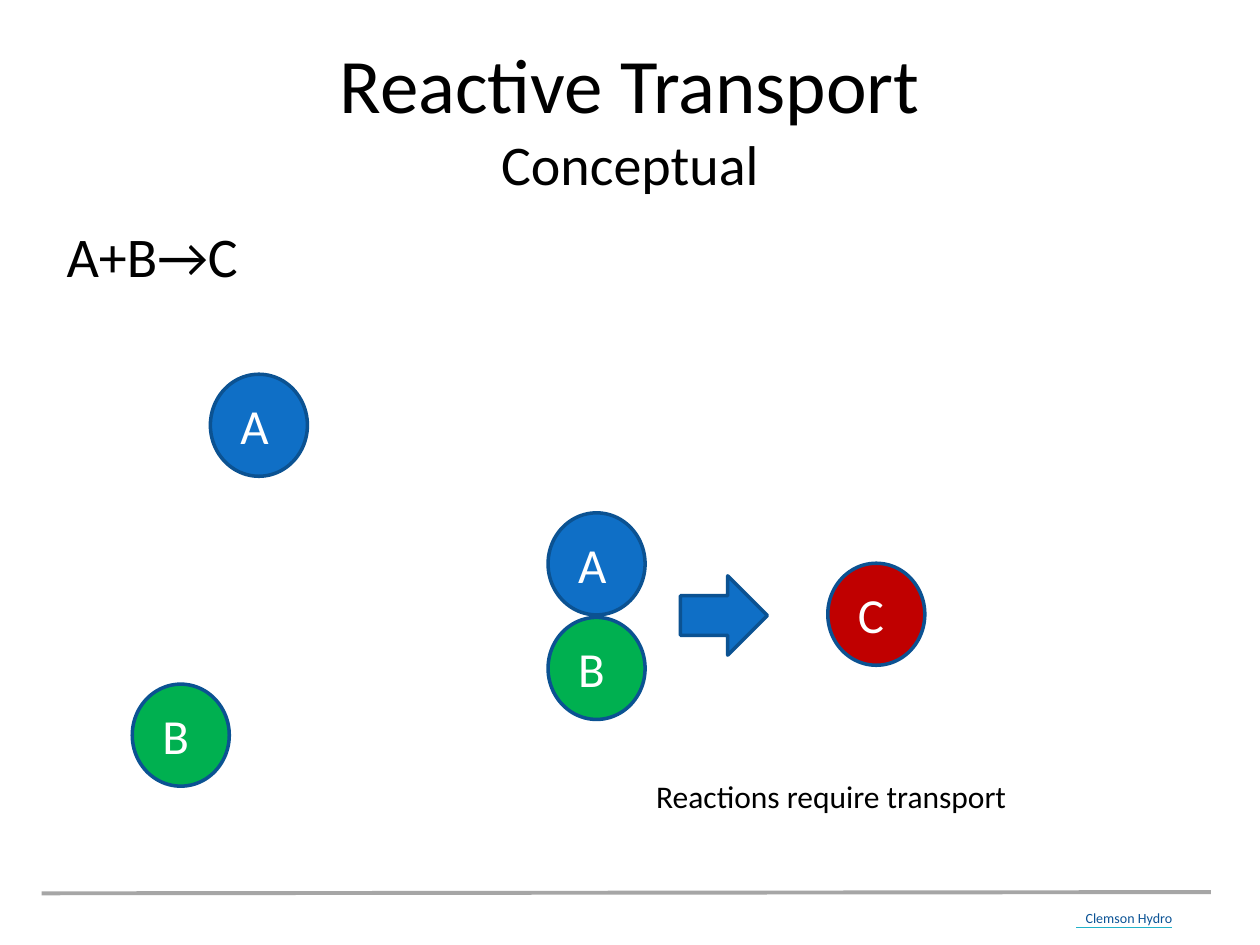
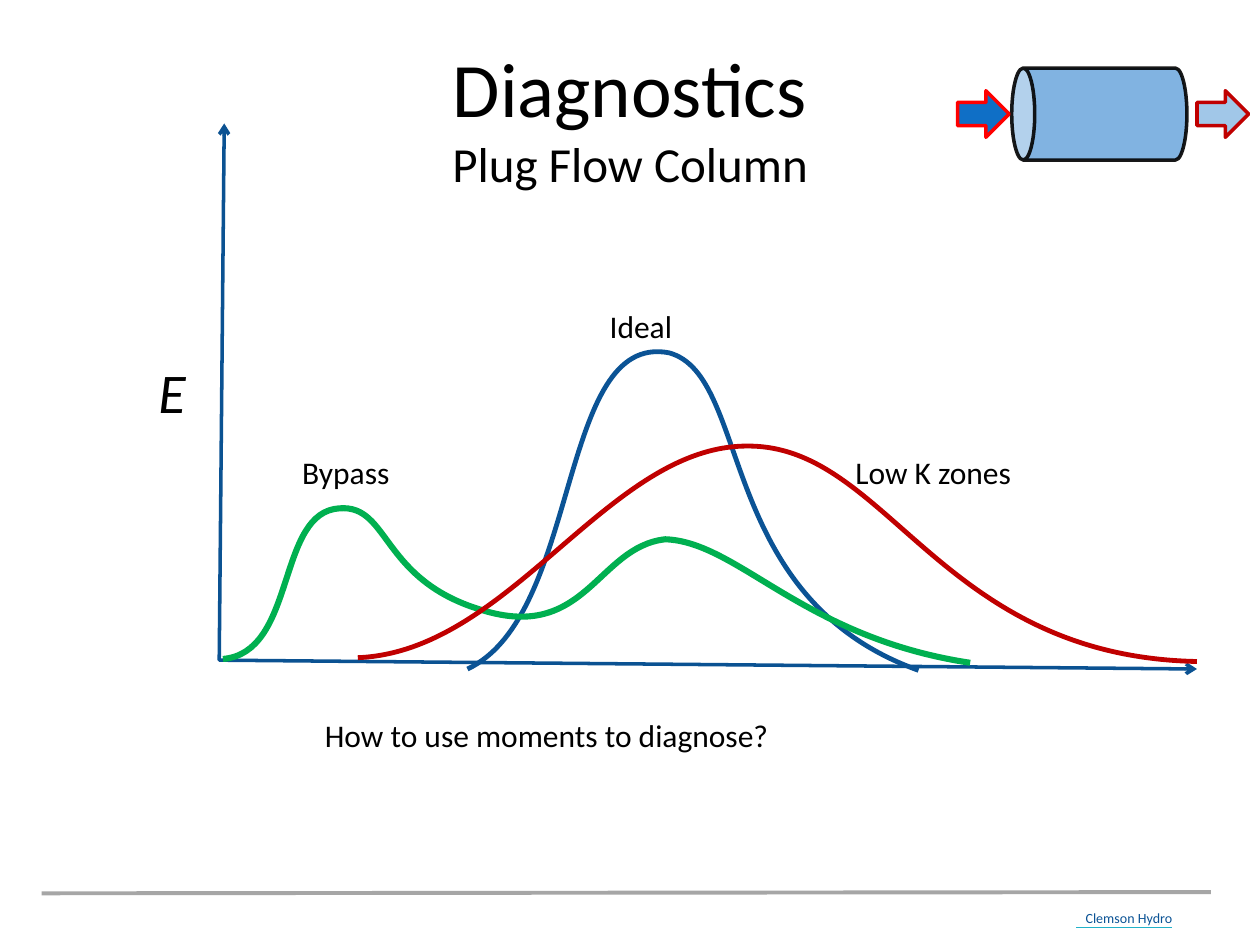
from lxml.etree import SubElement
from pptx import Presentation
from pptx.dml.color import RGBColor
from pptx.enum.shapes import MSO_CONNECTOR, MSO_SHAPE
from pptx.enum.text import MSO_ANCHOR, PP_ALIGN
from pptx.oxml.ns import qn
from pptx.util import Inches, Pt

FONT = "Calibri"
BLACK = RGBColor(0x00, 0x00, 0x00)
WHITE = RGBColor(0xFF, 0xFF, 0xFF)
GRAY = RGBColor(0xA6, 0xA6, 0xA6)
BLUE = RGBColor(0x0F, 0x6F, 0xC6)
NAVY = RGBColor(0x0B, 0x52, 0x92)
LINK_BLUE = RGBColor(0x0B, 0x53, 0x95)
TEAL = RGBColor(0x21, 0xB2, 0xC9)
GREEN = RGBColor(0x00, 0xB0, 0x50)
CRIMSON = RGBColor(0xC0, 0x00, 0x00)
RED = RGBColor(0xFF, 0x00, 0x00)

# The slide is a grid of 100 columns by 75 rows of square cells.
COLUMNS, ROWS = 100, 75
CELL = Inches(0.1)
BALL_WIDTH, BALL_HEIGHT = 7.7, 8.1
# Each species has a ball colour, a label width and a label fill.
SPECIES = {
    "A": (BLUE, 6.3, None),
    "B": (GREEN, 4.8, GREEN),
    "C": (CRIMSON, 5, CRIMSON),
}


def cells(*counts):
    return [round(count * CELL) for count in counts]


def style(font, size, color):
    font.name = FONT
    font.size = Pt(size)
    font.color.rgb = color


def add_text(page, box, text, size, color=BLACK, align=PP_ALIGN.LEFT, italic=False):
    holder = page.shapes.add_textbox(*cells(*box))
    holder.text_frame.word_wrap = True
    para = holder.text_frame.paragraphs[0]
    para.text = text
    para.alignment = align
    style(para.font, size, color)
    para.font.italic = italic
    return holder


def add_solid(page, kind, box, fill, line=NAVY):
    shape = page.shapes.add_shape(kind, *cells(*box))
    shape.shadow.inherit = False
    shape.fill.solid()
    shape.fill.fore_color.rgb = fill
    shape.line.color.rgb = line
    shape.line.width = Pt(2)
    return shape


def set_opacity(properties, percent):
    """Make the solid fill directly inside spPr or ln partly transparent."""
    color = properties.find(qn("a:solidFill"))[0]
    SubElement(color, qn("a:alpha"), val=str(percent * 1000))


def add_rule(page, start, end, color, width):
    rule = page.shapes.add_connector(MSO_CONNECTOR.STRAIGHT, *cells(*start, *end))
    rule.line.color.rgb = color
    rule.line.width = Pt(width)
    SubElement(rule._element.spPr, qn("a:effectLst"))


def add_path(page, origin, points, color, width):
    """Draw an open outline through points measured from origin."""
    placed = [cells(origin[0] + x, origin[1] + y) for x, y in points]
    builder = page.shapes.build_freeform(*placed[0], scale=1.0)
    builder.add_line_segments(placed[1:], close=False)
    outline = builder.convert_to_shape()
    outline.shadow.inherit = False
    outline.fill.background()
    outline.line.color.rgb = color
    outline.line.width = Pt(width)
    return outline


def add_curve(page, origin, knots, color, width):
    """Draw a chain of cubic curves: a start point, then three points a curve."""
    anchors = knots[::3]
    outline = add_path(page, origin, anchors, color, width)
    left = min(x for x, _ in anchors)
    top = min(y for _, y in anchors)
    segments = list(outline._element.iter(qn("a:lnTo")))
    for index, segment in enumerate(segments):
        segment.tag = qn("a:cubicBezTo")
        segment.clear()
        for x, y in knots[3 * index + 1:3 * index + 4]:
            across, down = cells(x - left, y - top)
            SubElement(segment, qn("a:pt"), x=str(across), y=str(down))


def add_footer(page, top):
    add_rule(page, (3.3, top + 0.1), (96.1, top), GRAY, 2.25)
    credit = page.shapes.add_group_shape()
    add_text(credit, (85, top + 0.9, 9.2, 2.4), "Clemson Hydro", 8, LINK_BLUE,
             PP_ALIGN.CENTER)
    add_rule(credit, (85.4, top + 2.8), (93, top + 2.8), TEAL, 0.75)


def add_title(page, title, subtitle, subtitle_size):
    frame = page.shapes.add_textbox(*cells(5, 3, COLUMNS - 10, 12.5)).text_frame
    frame.word_wrap = True
    frame.vertical_anchor = MSO_ANCHOR.MIDDLE
    para = frame.paragraphs[0]
    para.alignment = PP_ALIGN.CENTER
    for text, size in ((title, 44), (subtitle, subtitle_size)):
        if para.runs:
            para.add_line_break()
        span = para.add_run()
        span.text = text
        style(span.font, size, BLACK)


def start_page(deck, title, subtitle, subtitle_size):
    page = deck.slides.add_slide(deck.slide_layouts[6])
    add_footer(page, ROWS - 4.2)
    add_title(page, title, subtitle, subtitle_size)
    return page


def add_ball(page, left, top, letter):
    color, label_width, label_fill = SPECIES[letter]
    ball = page.shapes.add_group_shape()
    add_solid(ball, MSO_SHAPE.OVAL, (left, top, BALL_WIDTH, BALL_HEIGHT), color)
    label = add_text(ball, (left + 1.4, top + 1.2, label_width, 5.7), letter, 28, WHITE)
    if label_fill:
        label.fill.solid()
        label.fill.fore_color.rgb = label_fill


def add_reaction(page, left, top):
    """A and B touch and turn into C."""
    add_ball(page, left, top, "A")
    add_solid(page, MSO_SHAPE.RIGHT_ARROW, (left + 10.5, top + 5, 6.9, 6.3), BLUE)
    add_ball(page, left + 22.2, top + 4, "C")
    add_ball(page, left, top + BALL_HEIGHT + 0.2, "B")


def add_column(page, left, top):
    """A plug flow column lying on its side, with flow in and out."""
    can = add_solid(page, MSO_SHAPE.CAN, (left + 7.6, top - 5.1, 7.3, 13.9), BLUE, BLACK)
    can.rotation = 270
    set_opacity(can._element.spPr, 52)
    set_opacity(can._element.spPr.find(qn("a:ln")), 90)
    arrow_size = 4.1, 3.7
    add_solid(page, MSO_SHAPE.RIGHT_ARROW, (left, top, *arrow_size), BLUE, RED)
    outflow = add_solid(page, MSO_SHAPE.RIGHT_ARROW, (left + 19, top, *arrow_size),
                        BLUE, CRIMSON)
    set_opacity(outflow._element.spPr, 39)


def add_breakthrough_plot(page, left, top):
    axes = add_path(page, (left, top), [(0.4, 0), (0, 42.6), (77.6, 43.3)], NAVY, 2)
    line = axes._element.spPr.find(qn("a:ln"))
    for end in ("a:headEnd", "a:tailEnd"):
        SubElement(line, qn(end), type="arrow")

    curves = (
        (LINK_BLUE, 2.75, [
            (19.7, 43.3), (28.8, 39), (26.8, 16.5), (35.7, 18.2),
            (42.3, 20), (39.3, 37.6), (55.5, 43.4)]),
        (GREEN, 3.5, [
            (0.3, 42.5), (6, 42), (4.6, 31.5), (9.1, 30.6),
            (13.6, 29.8), (12.5, 36.1), (20.8, 38.6),
            (29.1, 41.2), (30, 33.6), (35.4, 33),
            (41.2, 33.2), (46.3, 40.8), (59.6, 42.8)]),
        (CRIMSON, 2.75, [
            (11, 42.4), (23.2, 41.9), (30.9, 25.5), (42, 25.6),
            (53.1, 25.6), (57.2, 42.3), (77.6, 42.7)]),
    )
    for color, width, knots in curves:
        add_curve(page, (left, top), knots, color, width)

    add_text(page, (left - 5.8, top + 18.1, 20.6, 6.4), "E", 32, italic=True)
    labels = (("Ideal", 30, 14.1, 21.5), ("Bypass", 5.6, 25.7, 14),
              ("Low K zones", 49.5, 25.7, 17.1))
    for text, x, y, width in labels:
        add_text(page, (left + x, top + y, width, 4), text, 18)


def build_reactive_transport(deck):
    page = start_page(deck, "Reactive Transport", "Conceptual", 32)
    add_text(page, (4.3, 17.1, 90, 49.5), "A+B→C", 32)
    add_ball(page, 16.7, 29.7, "A")
    add_ball(page, 10.5, 54.3, "B")
    add_reaction(page, 43.5, 40.7)
    add_text(page, (51.1, 61.2, 41.2, 4), "Reactions require transport", 18)


def build_diagnostics(deck):
    page = start_page(deck, "Diagnostics", "Plug Flow Column", 28)
    add_column(page, 76, 7.2)
    add_breakthrough_plot(page, 17.4, 9.8)
    add_text(page, (24.8, 56.3, 45.5, 4), "How to use moments to diagnose?", 18)


def main():
    deck = Presentation()
    deck.slide_width, deck.slide_height = cells(COLUMNS, ROWS)
    build_reactive_transport(deck)
    build_diagnostics(deck)
    deck.save("out.pptx")


if __name__ == "__main__":
    main()
